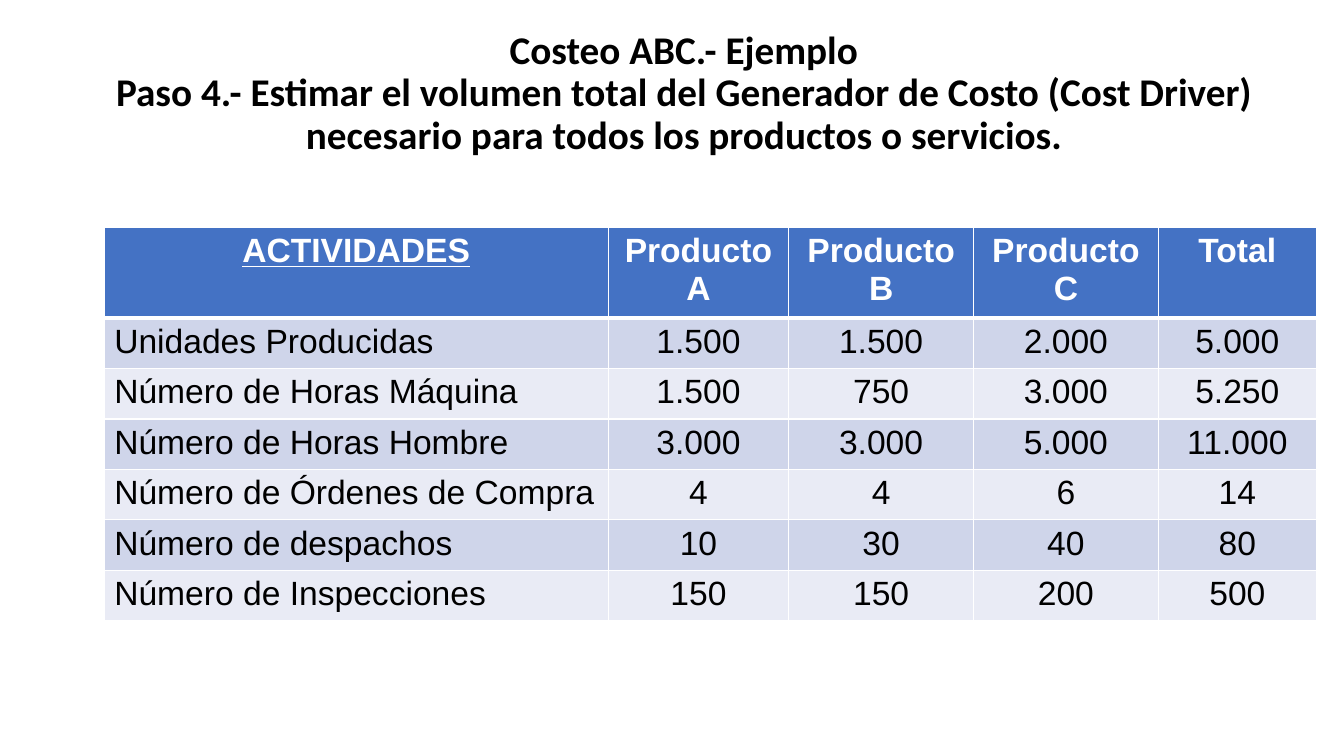
from dataclasses import dataclass

from lxml.etree import SubElement
from pptx import Presentation
from pptx.dml.color import RGBColor
from pptx.enum.text import MSO_ANCHOR as Anchor, PP_ALIGN as Align
from pptx.oxml.ns import qn
from pptx.util import Pt

BLACK = "000000"
WHITE = "FFFFFF"
HEADER_FILL = "4472C4"
BAND_FILLS = ("CFD5EA", "E9EBF5")
COLUMN_WIDTHS = (360, 129, 132, 132, 113)
ROW_HEIGHT = 29.5


@dataclass(frozen=True)
class Style:
    font: str
    size: float
    color: str
    bold: bool = False
    underline: bool = False


@dataclass(frozen=True)
class Activity:
    name: str
    volumes: tuple[str, ...]


TITLE_LINES = (
    "Costeo ABC.- Ejemplo",
    "Paso 4.- Estimar el volumen total del Generador de Costo (Cost Driver) "
    "necesario para todos los productos o servicios.",
)
TITLE = Style("Calibri", 28, BLACK, bold=True)
HEADING = Style("Arial", 24, WHITE, bold=True)
FIRST_HEADING = Style("Arial", 24, WHITE, bold=True, underline=True)
BODY = Style("Arial", 24, BLACK)

HEADER = Activity("ACTIVIDADES", ("Producto A", "Producto B", "Producto C", "Total"))
ACTIVITIES = (
    Activity("Unidades Producidas", ("1.500", "1.500", "2.000", "5.000")),
    Activity("Número de Horas Máquina", ("1.500", "750", "3.000", "5.250")),
    Activity("Número de Horas Hombre", ("3.000", "3.000", "5.000", "11.000")),
    Activity("Número de Órdenes de Compra", ("4", "4", "6", "14")),
    Activity("Número de despachos", ("10", "30", "40", "80")),
    Activity("Número de Inspecciones", ("150", "150", "200", "500")),
)


def rgb(color: str) -> RGBColor:
    return RGBColor.from_string(color)


def add_span(para, text: str, style: Style) -> None:
    span = para.add_run()
    span.text = text
    span.font.name = style.font
    span.font.size = Pt(style.size)
    span.font.bold = style.bold
    span.font.underline = style.underline
    span.font.color.rgb = rgb(style.color)


def add_title(page) -> None:
    box = page.shapes.add_textbox(Pt(74.4), Pt(30), Pt(828), Pt(74.4))
    frame = box.text_frame
    frame.word_wrap = True
    frame.vertical_anchor = Anchor.MIDDLE
    para = frame.paragraphs[0]
    para.alignment = Align.CENTER
    para.line_spacing = 0.9
    for index, line in enumerate(TITLE_LINES):
        if index:
            para.add_line_break()
        add_span(para, line, TITLE)


def set_borders(cell, top: float, bottom: float) -> None:
    properties = cell._tc.get_or_add_tcPr()
    for side, width in (("L", 1), ("R", 1), ("T", top), ("B", bottom)):
        line = SubElement(properties, qn(f"a:ln{side}"), w=str(Pt(width)))
        fill = SubElement(line, qn("a:solidFill"))
        SubElement(fill, qn("a:srgbClr"), val=WHITE)


def fill_cell(cell, text: str, style: Style, fill: str, align: Align) -> None:
    cell.fill.solid()
    cell.fill.fore_color.rgb = rgb(fill)
    para = cell.text_frame.paragraphs[0]
    para.alignment = align
    add_span(para, text, style)


def add_activity_table(page) -> None:
    rows = (HEADER, *ACTIVITIES)
    table = page.shapes.add_table(
        len(rows), len(COLUMN_WIDTHS), Pt(74.4), Pt(162.4),
        Pt(sum(COLUMN_WIDTHS)), Pt(ROW_HEIGHT * len(rows)),
    ).table
    table.horz_banding = False
    for column, width in zip(table.columns, COLUMN_WIDTHS):
        column.width = Pt(width)
    for r, activity in enumerate(rows):
        table.rows[r].height = Pt(ROW_HEIGHT)
        is_header = r == 0
        fill = HEADER_FILL if is_header else BAND_FILLS[(r - 1) % 2]
        for c, text in enumerate((activity.name, *activity.volumes)):
            cell = table.cell(r, c)
            set_borders(cell, top=3 if r == 1 else 1, bottom=3 if is_header else 1)
            if is_header:
                style = HEADING if c else FIRST_HEADING
            else:
                style = BODY
            align = Align.CENTER if is_header or c else Align.LEFT
            fill_cell(cell, text, style, fill, align)


def main() -> None:
    deck = Presentation()
    deck.slide_width, deck.slide_height = Pt(960), Pt(540)
    page = deck.slides.add_slide(deck.slide_layouts[6])
    add_title(page)
    add_activity_table(page)
    deck.save("out.pptx")


if __name__ == "__main__":
    main()
